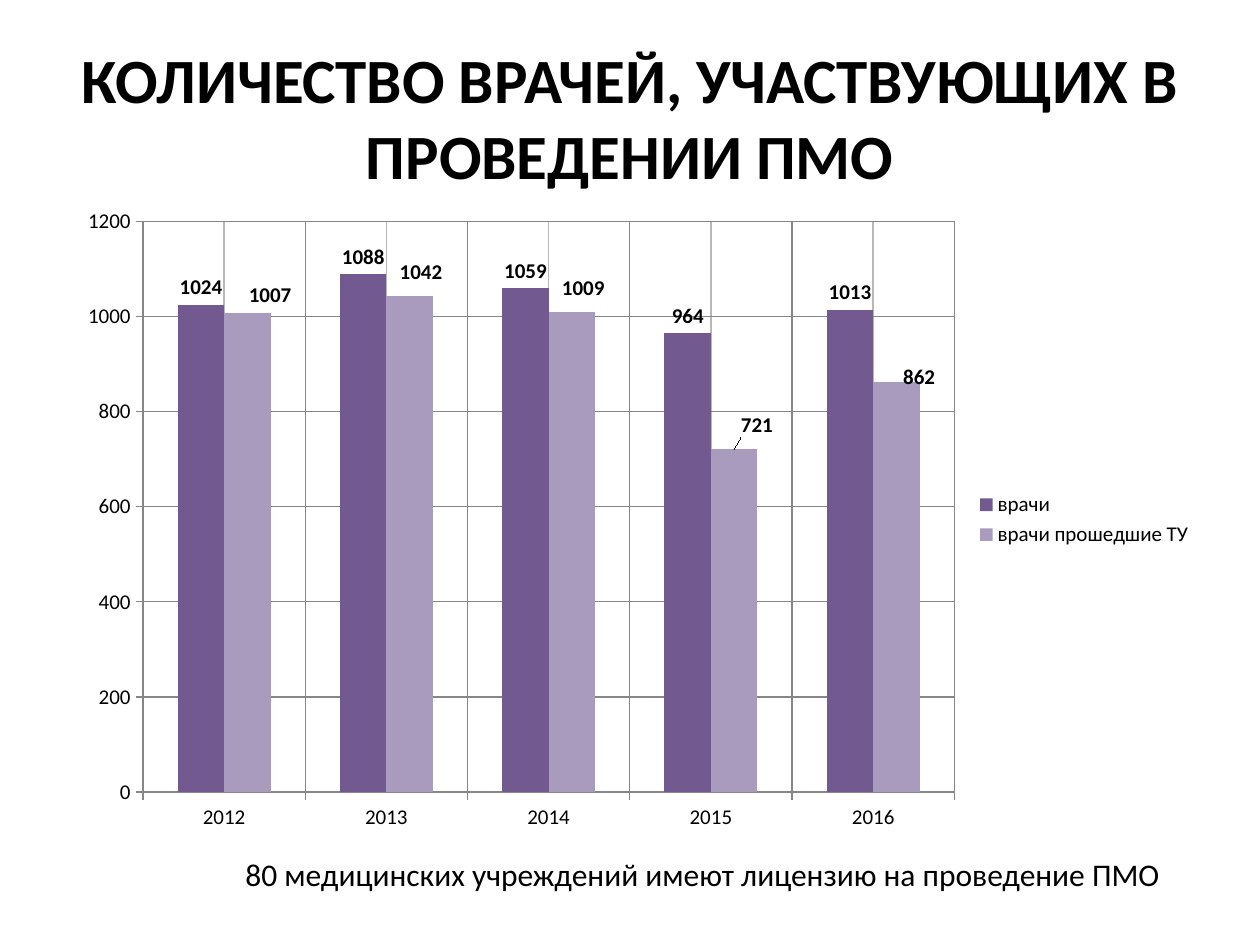
import dataclasses

import lxml.etree
import pptx
import pptx.chart.data
import pptx.dml.color
import pptx.enum.chart
import pptx.enum.text
import pptx.oxml
import pptx.oxml.ns
import pptx.util

Inches = pptx.util.Inches
Pt = pptx.util.Pt
RGBColor = pptx.dml.color.RGBColor
qn = pptx.oxml.ns.qn

BLACK = RGBColor(0x00, 0x00, 0x00)
DARK = RGBColor(0x72, 0x59, 0x90)
LIGHT = RGBColor(0xA9, 0x9B, 0xBD)
GRID = RGBColor(0x86, 0x86, 0x86)
PALE = RGBColor(0xB7, 0xB7, 0xB7)
FACE = "Calibri"
YEARS = ["2012", "2013", "2014", "2015", "2016"]


@dataclasses.dataclass
class Group:
    name: str
    vals: list[int]
    color: RGBColor
    # Label shifts as shares of the chart's width and height
    shifts: list[tuple[float, float]]


GROUPS = [
    Group("врачи", [1024, 1088, 1059, 964, 1013], DARK, []),
    Group("врачи прошедшие ТУ", [1007, 1042, 1009, 721, 862], LIGHT,
          [(0.02, 0), (0.01, -0.01), (0.01, -0.01), (0.02, -0.01), (0.02, 0.02)]),
]


def style(font, size: int, bold: bool = False) -> None:
    font.name = FACE
    font.size = Pt(size)
    font.bold = bold
    font.color.rgb = BLACK


def write(frame, text: str, size: int, bold: bool = False):
    par = frame.paragraphs[0]
    run = par.add_run()
    run.text = text
    style(run.font, size, bold)
    return par


def layout(**parts: float | str):
    """Make a manual chart layout."""
    root = pptx.oxml.parse_xml(
        '<c:layout xmlns:c="http://schemas.openxmlformats.org/drawingml/2006/chart">'
        "<c:manualLayout/></c:layout>")
    for key, val in parts.items():
        lxml.etree.SubElement(root[0], qn(f"c:{key}")).set("val", str(val))
    return root


def rule(axis) -> None:
    """Format an axis with its gridlines."""
    axis.has_major_gridlines = True
    axis.major_gridlines.format.line.color.rgb = GRID
    axis.format.line.color.rgb = GRID
    axis.major_tick_mark = pptx.enum.chart.XL_TICK_MARK.CROSS
    axis.minor_tick_mark = pptx.enum.chart.XL_TICK_MARK.NONE
    style(axis.tick_labels.font, 12)


def divide(axis) -> None:
    """Add pale minor gridlines to an axis."""
    axis.has_minor_gridlines = True
    node = axis._element.find(qn("c:minorGridlines"))
    for tag in ("c:spPr", "a:ln", "a:solidFill", "a:srgbClr"):
        node = lxml.etree.SubElement(node, qn(tag))
    node.set("val", str(PALE))


def paint(series, group: Group) -> None:
    """Colour a series and place its labels."""
    end = pptx.enum.chart.XL_LABEL_POSITION.OUTSIDE_END
    series.format.fill.solid()
    series.format.fill.fore_color.rgb = group.color
    series.invert_if_negative = False
    labels = series.data_labels
    labels.show_value = True
    labels.position = end
    style(labels.font, 12, True)
    for i in range(len(group.shifts)):
        label = series.points[i].data_label
        style(label.font, 12, True)
        label.position = end
    for item, (dx, dy) in zip(labels._element.findall(qn("c:dLbl")), group.shifts):
        item.find(qn("c:idx")).addnext(layout(x=dx, y=dy))


def plot(slide) -> None:
    data = pptx.chart.data.CategoryChartData()
    data.categories = YEARS
    for group in GROUPS:
        data.add_series(group.name, group.vals)
    chart = slide.shapes.add_chart(
        pptx.enum.chart.XL_CHART_TYPE.COLUMN_CLUSTERED,
        Inches(0.5), Inches(1.55), Inches(9.07), Inches(5.15), data).chart
    chart.has_title = False
    style(chart.font, 10)

    # Axes
    rule(chart.category_axis)
    rule(chart.value_axis)
    divide(chart.category_axis)
    chart.value_axis.minimum_scale = 0
    chart.value_axis.maximum_scale = 1200
    chart.value_axis.major_unit = 200

    # Columns
    bars = chart.plots[0]
    bars.gap_width = 150
    bars.overlap = 0
    bars.vary_by_categories = False
    for series, group in zip(bars.series, GROUPS):
        paint(series, group)

    # Legend
    chart.has_legend = True
    chart.legend.position = pptx.enum.chart.XL_LEGEND_POSITION.RIGHT
    chart.legend.include_in_layout = False
    style(chart.legend.font, 12)

    # Plot area
    area = chart._chartSpace.chart.plotArea
    for old in area.findall(qn("c:layout")):
        area.remove(old)
    area.insert(0, layout(layoutTarget="inner", xMode="edge", yMode="edge",
                          x=0.07, y=0.04, w=0.71, h=0.88))


def main() -> None:
    deck = pptx.Presentation()
    deck.slide_width = Inches(10)
    deck.slide_height = Inches(7.5)
    slide = deck.slides.add_slide(deck.slide_layouts[5])

    # Title
    title = slide.shapes.title
    title.left, title.top = Inches(0.5), Inches(0.3)
    title.width, title.height = Inches(9), Inches(1.25)
    frame = title.text_frame
    frame.vertical_anchor = pptx.enum.text.MSO_ANCHOR.MIDDLE
    par = write(frame, "КОЛИЧЕСТВО ВРАЧЕЙ, УЧАСТВУЮЩИХ В ПРОВЕДЕНИИ ПМО", 36, True)
    par.alignment = pptx.enum.text.PP_ALIGN.CENTER

    plot(slide)

    # Footnote
    note = slide.shapes.add_textbox(
        Inches(1.85), Inches(6.74), Inches(7.54), Inches(0.4)).text_frame
    note.word_wrap = False
    note.auto_size = pptx.enum.text.MSO_AUTO_SIZE.SHAPE_TO_FIT_TEXT
    write(note, "80 медицинских учреждений имеют лицензию на проведение ПМО", 18)

    deck.save("out.pptx")


if __name__ == "__main__":
    main()
